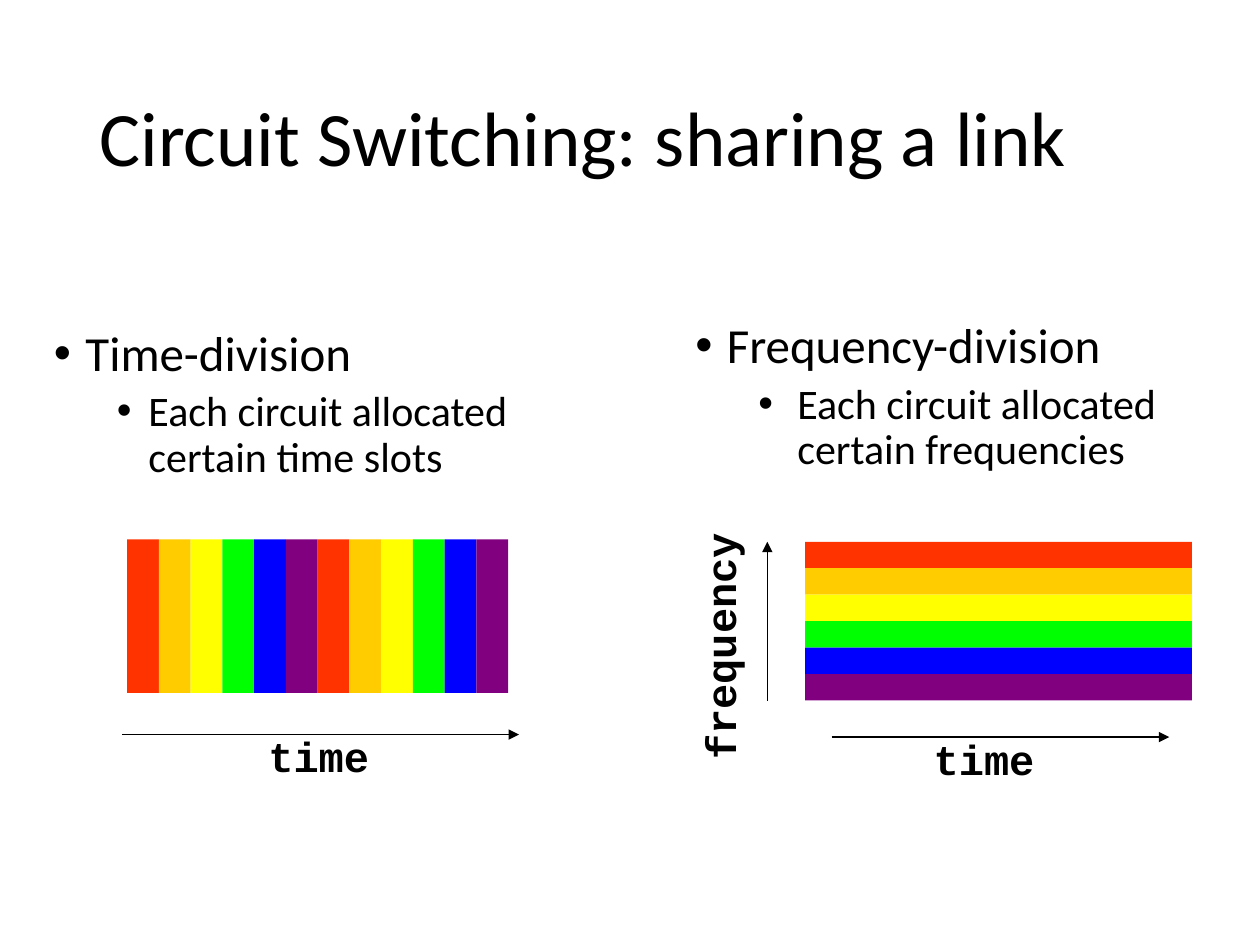
import pptx
import pptx.util
import pptx.dml.color
import pptx.enum.shapes
import pptx.enum.text
import pptx.oxml
import pptx.oxml.ns
import lxml.etree

RGBColor = pptx.dml.color.RGBColor
BLACK = RGBColor(0x00, 0x00, 0x00)
RED = RGBColor(0xFF, 0x33, 0x00)
ORANGE = RGBColor(0xFF, 0xCC, 0x00)
YELLOW = RGBColor(0xFF, 0xFF, 0x00)
GREEN = RGBColor(0x00, 0xFF, 0x00)
BLUE = RGBColor(0x00, 0x00, 0xFF)
PURPLE = RGBColor(0x80, 0x00, 0x80)
CIRCUITS = [RED, ORANGE, YELLOW, GREEN, BLUE, PURPLE]

deck = pptx.Presentation()
deck.slide_width = pptx.util.Inches(10)
deck.slide_height = pptx.util.Inches(7.5)
page = deck.slides.add_slide(deck.slide_layouts[6])
COLUMN = deck.slide_width / 100
ROW = deck.slide_height / 75


def grid(*numbers):
    return [round(number * (ROW if index % 2 else COLUMN)) for index, number in enumerate(numbers)]


def write(para, text, font, spacing):
    para.text = text
    for target, values in ((para, spacing), (para.font, font)):
        for name, value in values.items():
            setattr(target, name, value)
    para.font.color.rgb = BLACK


title = page.shapes.add_textbox(*grid(6.9, 4, 86.2, 14.5))
title.text_frame.word_wrap = True
title.text_frame.vertical_anchor = pptx.enum.text.MSO_ANCHOR.MIDDLE
write(
    title.text_frame.paragraphs[0],
    "Circuit Switching: sharing a link",
    {"name": "Calibri", "size": pptx.util.Pt(44)},
    {"line_spacing": 0.9},
)

topics = [
    ((3.3, 25.6, 44.2, 15), "Time-division", "Each circuit allocated \vcertain time slots", 0.75, 0.25),
    ((54.2, 25, 45.4, 14.1), "Frequency-division", "Each circuit allocated certain frequencies", 0.81, 0.31),
]
for place, heading, detail, margin, hanging in topics:
    box = page.shapes.add_textbox(*grid(*place))
    box.text_frame.word_wrap = True
    levels = [(heading, 0, 28, 0, 0.25, 0.25), (detail, 1, 24, 5, margin, hanging)]
    for text, level, size, before, left, hang in levels:
        para = box.text_frame.add_paragraph() if level else box.text_frame.paragraphs[0]
        properties = para._p.get_or_add_pPr()
        properties.set("marL", str(pptx.util.Inches(left)))
        properties.set("indent", str(-pptx.util.Inches(hang)))
        for tag, key, value in (("a:buFont", "typeface", "Arial"), ("a:buChar", "char", "•")):
            lxml.etree.SubElement(properties, pptx.oxml.ns.qn(tag)).set(key, value)
        write(
            para,
            text,
            {"name": "Calibri", "size": pptx.util.Pt(size)},
            {"level": level, "line_spacing": 0.9, "space_before": pptx.util.Pt(before)},
        )

SLOT = 30.24 / 12
BAND = 12.6 / 6
slots = [(10.1 + SLOT * index, 42.8, SLOT, 12.2, color) for index, color in enumerate(CIRCUITS * 2)]
bands = [(63.9, 43 + BAND * index, 30.7, BAND, color) for index, color in enumerate(CIRCUITS)]
for stripes, shapes in ((slots, page.shapes), (bands, page.shapes.add_group_shape().shapes)):
    for *place, color in stripes:
        stripe = shapes.add_shape(pptx.enum.shapes.MSO_SHAPE.RECTANGLE, *grid(*place))
        stripe.shadow.inherit = False
        stripe.fill.solid()
        stripe.fill.fore_color.rgb = color
        stripe.line.fill.background()

for ends in ((9.7, 58.3, 41.2, 58.3), (66, 58.5, 92.8, 58.5), (60.9, 55.6, 60.9, 43)):
    axis = page.shapes.add_connector(pptx.enum.shapes.MSO_CONNECTOR.STRAIGHT, *grid(*ends))
    axis.line.color.rgb = BLACK
    axis.line.width = pptx.util.Pt(0.75)
    head = lxml.etree.SubElement(axis.line._get_or_add_ln(), pptx.oxml.ns.qn("a:tailEnd"))
    head.set("type", "triangle")
    lxml.etree.SubElement(axis._element.spPr, pptx.oxml.ns.qn("a:effectLst"))

labels = [
    ("time", (20.3, 57.5, 10, 5), 0),
    ("time", (73.1, 57.7, 10, 5), 0),
    ("frequency", (47.1, 48.8, 20, 5), 270),
]
for text, place, rotation in labels:
    box = page.shapes.add_textbox(*grid(*place))
    box.rotation = rotation
    box.text_frame.word_wrap = False
    box.text_frame.auto_size = pptx.enum.text.MSO_AUTO_SIZE.SHAPE_TO_FIT_TEXT
    write(
        box.text_frame.paragraphs[0],
        text,
        {"name": "Courier New", "size": pptx.util.Pt(24), "bold": True},
        {"alignment": pptx.enum.text.PP_ALIGN.CENTER},
    )

deck.save("out.pptx")
